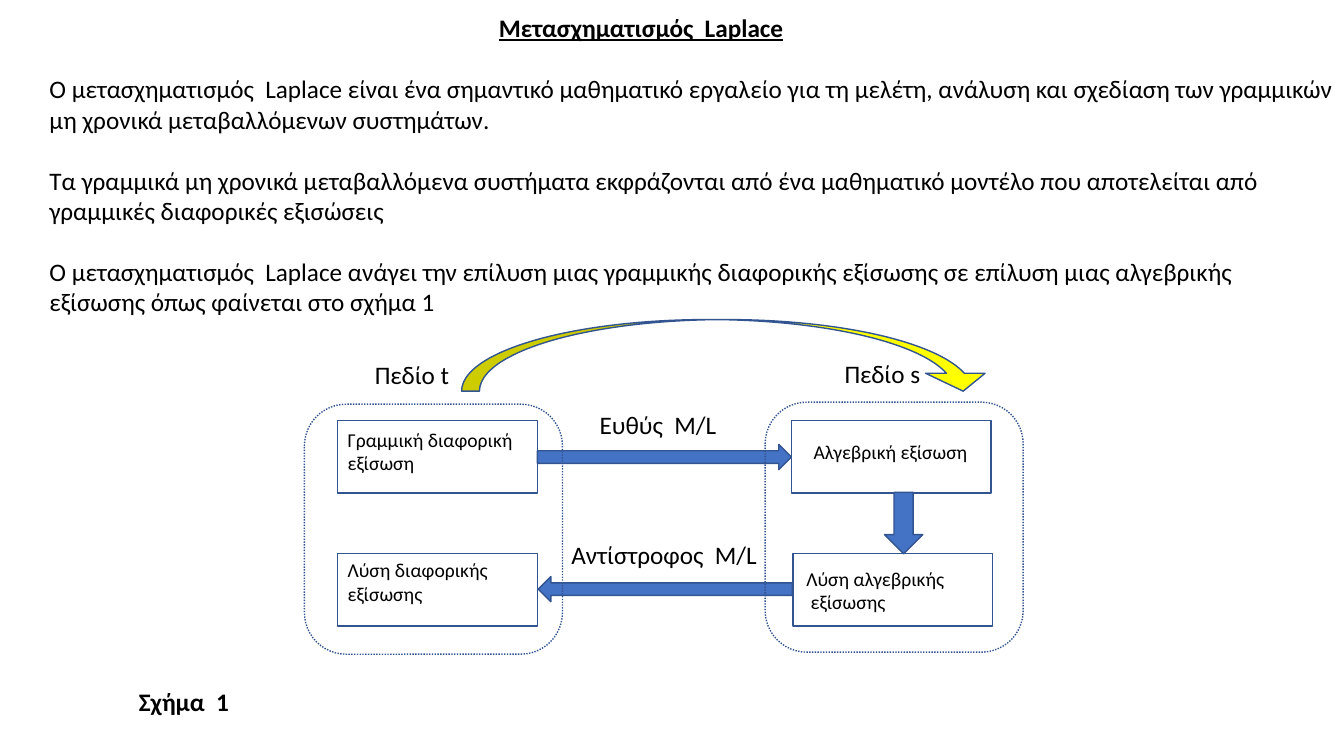
from dataclasses import dataclass

from lxml import etree
from pptx import Presentation
from pptx import util as u
from pptx.dml.color import RGBColor
from pptx.enum import dml, shapes, text
from pptx.oxml.ns import qn


@dataclass(frozen=True)
class Theme:
    font: str = "Calibri"
    ink: RGBColor = RGBColor(0, 0, 0)
    line: RGBColor = RGBColor(0x32, 0x54, 0x91)
    blue: RGBColor = RGBColor(0x44, 0x72, 0xC4)
    yellow: RGBColor = RGBColor(0xFF, 0xFF, 0)
    text_size: u.Pt = u.Pt(18)
    box_size: u.Pt = u.Pt(14)
    line_width: u.Pt = u.Pt(1)
    gap: u.Pt = u.Pt(22)


THEME = Theme()
WIDTH, HEIGHT = u.Inches(13.33), u.Inches(7.5)
SHAPE = shapes.MSO_SHAPE
BOX_W, BOX_H = 14.85, 9.6
FRAME_W, FRAME_H = 19.2, 33.07
ARROW_W, ARROW_H = 18.9, 3.33
LABEL_H = 5.33

TITLE = "Μετασχηματισμός  Laplace"
BODY = [
    "O μετασχηματισμός  Laplace είναι ένα σημαντικό μαθηματικό εργαλείο για τη μελέτη, "
    "ανάλυση και σχεδίαση των γραμμικών μη χρονικά μεταβαλλόμενων συστημάτων.",
    "Τα γραμμικά μη χρονικά μεταβαλλόμενα συστήματα εκφράζονται από ένα μαθηματικό μοντέλο "
    "που αποτελείται από γραμμικές διαφορικές εξισώσεις",
    "O μετασχηματισμός  Laplace ανάγει την επίλυση μιας γραμμικής διαφορικής εξίσωσης σε "
    "επίλυση μιας αλγεβρικής εξίσωσης όπως φαίνεται στο σχήμα 1",
]


def area(x, y, w, h):
    """Turn percentages of the slide into lengths."""
    return [u.Emu(round(share * side / 100))
            for share, side in zip((x, y, w, h), (WIDTH, HEIGHT) * 2)]


def write(sp, lines, size, align=text.PP_ALIGN.LEFT, bold=False, underline=False, gap=0):
    tf = sp.text_frame
    tf.text = "\n".join(lines)
    tf.vertical_anchor = text.MSO_ANCHOR.TOP
    for i, p in enumerate(tf.paragraphs):
        p.alignment = align
        p.space_before = gap if i else u.Pt(0)
        p.font.name = THEME.font
        p.font.size = size
        p.font.bold = bold
        p.font.underline = underline
        p.font.color.rgb = THEME.ink
    return tf


def place(sp, box):
    sp.left, sp.top, sp.width, sp.height = area(*box)
    sp.text_frame.auto_size = text.MSO_AUTO_SIZE.NONE


def add_intro(s):
    title, body = s.shapes.title, s.placeholders[1]
    place(title, (2.93, 0.93, 89.55, LABEL_H))
    write(title, [TITLE], THEME.text_size, text.PP_ALIGN.CENTER, bold=True, underline=True)
    place(body, (2.93, 9.07, 97.05, 33.6))
    tf = write(body, BODY, THEME.text_size, gap=THEME.gap)
    for p in tf.paragraphs:
        pPr = p._p.get_or_add_pPr()
        pPr.set("marL", "0")
        pPr.set("indent", "0")
        pPr.find(qn("a:defRPr")).addprevious(etree.Element(qn("a:buNone")))


def add_outline(s, kind, box, fill=None):
    sp = s.shapes.add_shape(kind, *area(*box))
    sp.shadow.inherit = False
    if fill is None:
        sp.fill.background()
    else:
        sp.fill.solid()
        sp.fill.fore_color.rgb = fill
    sp.line.color.rgb = THEME.line
    sp.line.width = THEME.line_width
    return sp


def add_box(s, x, y, lines, left, top):
    sp = add_outline(s, SHAPE.RECTANGLE, (x, y, BOX_W, BOX_H))
    tf = write(sp, lines, THEME.box_size)
    tf.word_wrap = True
    tf.margin_left, tf.margin_top = u.Inches(left), u.Inches(top)
    tf.margin_right = tf.margin_bottom = 0


def add_frame(s, x, y):
    sp = add_outline(s, SHAPE.ROUNDED_RECTANGLE, (x, y, FRAME_W, FRAME_H))
    sp.line.dash_style = dml.MSO_LINE.ROUND_DOT


def add_label(s, x, y, w, words, bold=False):
    sp = s.shapes.add_textbox(*area(x, y, w, LABEL_H))
    write(sp, [words], THEME.text_size, bold=bold).word_wrap = False


def add_curved_arrow(s, box):
    sp = add_outline(s, SHAPE.CURVED_LEFT_ARROW, box, THEME.yellow)
    sp.rotation = 270
    for i, value in enumerate((0.25, 0.83, 0.25)):
        sp.adjustments[i] = value


def main():
    prs = Presentation()
    prs.slide_width, prs.slide_height = WIDTH, HEIGHT
    s = prs.slides.add_slide(prs.slide_layouts[1])
    add_intro(s)

    for x, y, lines, left, top in [
        (25.13, 55.6, ["Γραμμική διαφορική", "εξίσωση"], 0.1, 0.07),
        (58.88, 55.6, ["Αλγεβρική εξίσωση"], 0.22, 0.19),
        (25.13, 73.2, ["Λύση διαφορικής", "εξίσωσης"], 0.1, 0.05),
        (59.02, 73.2, ["Λύση αλγεβρικής", " εξίσωσης"], 0.13, 0.13),
    ]:
        add_box(s, x, y, lines, left, top)

    for kind, box in [
        (SHAPE.RIGHT_ARROW, (39.98, 58.8, ARROW_W, ARROW_H)),
        (SHAPE.LEFT_ARROW, (40.05, 76.27, ARROW_W, ARROW_H)),
        (SHAPE.DOWN_ARROW, (65.81, 65.13, 2.85, 8.13)),
    ]:
        add_outline(s, kind, box, THEME.blue)

    add_frame(s, 22.65, 53.47)
    add_frame(s, 56.93, 53.2)
    add_curved_arrow(s, (51.45, 11.87, 5.33, 70.27))

    add_label(s, 43.88, 53.47, 10.28, "Ευθύς  M/L")
    add_label(s, 41.78, 70.67, 15.53, "Αντίστροφος  M/L")
    add_label(s, 27.15, 46.93, 7.13, "Πεδίο t")
    add_label(s, 62.1, 46.8, 7.2, "Πεδίο s")
    add_label(s, 9.6, 90.13, 8.33, "Σχήμα  1", bold=True)

    prs.save("out.pptx")


if __name__ == "__main__":
    main()
